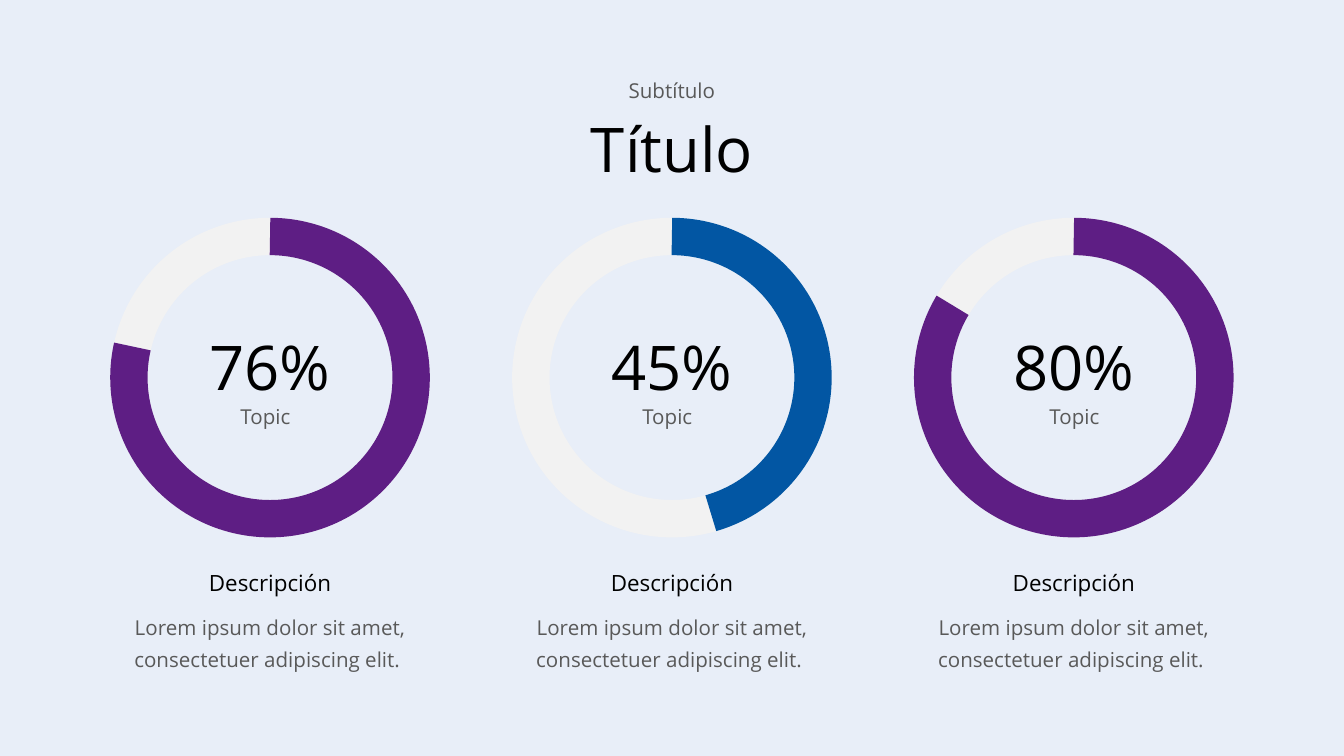
from dataclasses import dataclass

from pptx import Presentation
from pptx.dml.color import RGBColor
from pptx.enum import shapes, text
from pptx.util import Pt

COLORS = {
    "background": "E8EEF8",
    "track": "F2F2F2",
    "purple": "5E1E84",
    "blue": "0256A3",
    "black": "000000",
    "gray": "595959",
}
FONT = "Open Sans"
SLIDE_WIDTH, SLIDE_HEIGHT = 720, 405
COLUMN_PITCH = 215.3
RING_TOP, RING_SIZE, RING_WIDTH = 126.7, 151.2, 20
DESCRIPTION_WIDTH = 178.6
LOREM = "Lorem ipsum dolor sit amet, consectetuer adipiscing elit. "


@dataclass
class Gauge:
    percent: str
    sweep: float  # degrees, clockwise from the top
    color: str
    topic_shift: float


GAUGES = [
    Gauge("76%", 282.74, "purple", -2.5),
    Gauge("45%", 163.98, "blue", -2.5),
    Gauge("80%", 300.82, "purple", 0.3),
]


def rgb(name: str) -> RGBColor:
    return RGBColor.from_string(COLORS[name])


def write(shape, content: str, *, center: float, top: float, width: float,
          height: float, size: float, color: str = "black",
          line_spacing: float = 1.0) -> None:
    """Place a text shape around a centre line and format its one paragraph."""
    shape.left, shape.top = Pt(center - width / 2), Pt(top)
    shape.width, shape.height = Pt(width), Pt(height)
    frame = shape.text_frame
    frame.text = content
    frame.word_wrap = True
    frame.auto_size = text.MSO_AUTO_SIZE.SHAPE_TO_FIT_TEXT
    frame.vertical_anchor = text.MSO_ANCHOR.TOP
    frame.margin_left = frame.margin_right = Pt(5)
    frame.margin_top = frame.margin_bottom = Pt(2.7)
    paragraph = frame.paragraphs[0]
    paragraph.alignment = text.PP_ALIGN.CENTER
    paragraph.line_spacing = line_spacing
    paragraph.space_before = Pt(0)
    font = paragraph.runs[0].font
    font.name, font.size = FONT, Pt(size)
    font.color.rgb = rgb(color)


def add_label(slide, content: str, **layout) -> None:
    box = slide.shapes.add_textbox(Pt(0), Pt(0), Pt(10), Pt(10))
    write(box, content, **layout)


def add_ring(slide, kind, center: float, color: str):
    ring = slide.shapes.add_shape(kind, Pt(center - RING_SIZE / 2), Pt(RING_TOP),
                                  Pt(RING_SIZE), Pt(RING_SIZE))
    ring.shadow.inherit = False
    ring.fill.background()
    ring.line.color.rgb = rgb(color)
    ring.line.width = Pt(RING_WIDTH)
    return ring


def add_gauge(slide, gauge: Gauge, center: float) -> None:
    add_ring(slide, shapes.MSO_SHAPE.OVAL, center, "track")
    arc = add_ring(slide, shapes.MSO_SHAPE.ARC, center, gauge.color)
    # One degree is 60000 angle units; adjustments count in 100000 units.
    arc.adjustments[0] = 270 * 0.6
    arc.adjustments[1] = (270 + gauge.sweep) % 360 * 0.6

    add_label(slide, gauge.percent, center=center, top=173.5, width=82,
              height=45.4, size=33)
    add_label(slide, "Topic", center=center + gauge.topic_shift, top=213.8,
              width=93, height=18.7, size=11, color="gray")
    add_label(slide, "Descripción", center=center, top=302.4,
              width=DESCRIPTION_WIDTH, height=20, size=12)
    add_label(slide, LOREM, center=center, top=322.6, width=DESCRIPTION_WIDTH,
              height=36, size=11, color="gray", line_spacing=1.3)


def main() -> None:
    presentation = Presentation()
    presentation.slide_width = Pt(SLIDE_WIDTH)
    presentation.slide_height = Pt(SLIDE_HEIGHT)
    slide = presentation.slides.add_slide(presentation.slide_layouts[0])
    slide.background.fill.solid()
    slide.background.fill.fore_color.rgb = rgb("background")

    middle = SLIDE_WIDTH / 2
    write(slide.shapes.title, "Título", center=middle, top=56.9, width=466.6,
          height=45.4, size=33)
    write(slide.placeholders[1], "Subtítulo", center=middle, top=38.9,
          width=133.2, height=18.7, size=11, color="gray")
    for column, gauge in enumerate(GAUGES):
        add_gauge(slide, gauge, middle + (column - 1) * COLUMN_PITCH)

    presentation.save("out.pptx")


if __name__ == "__main__":
    main()
